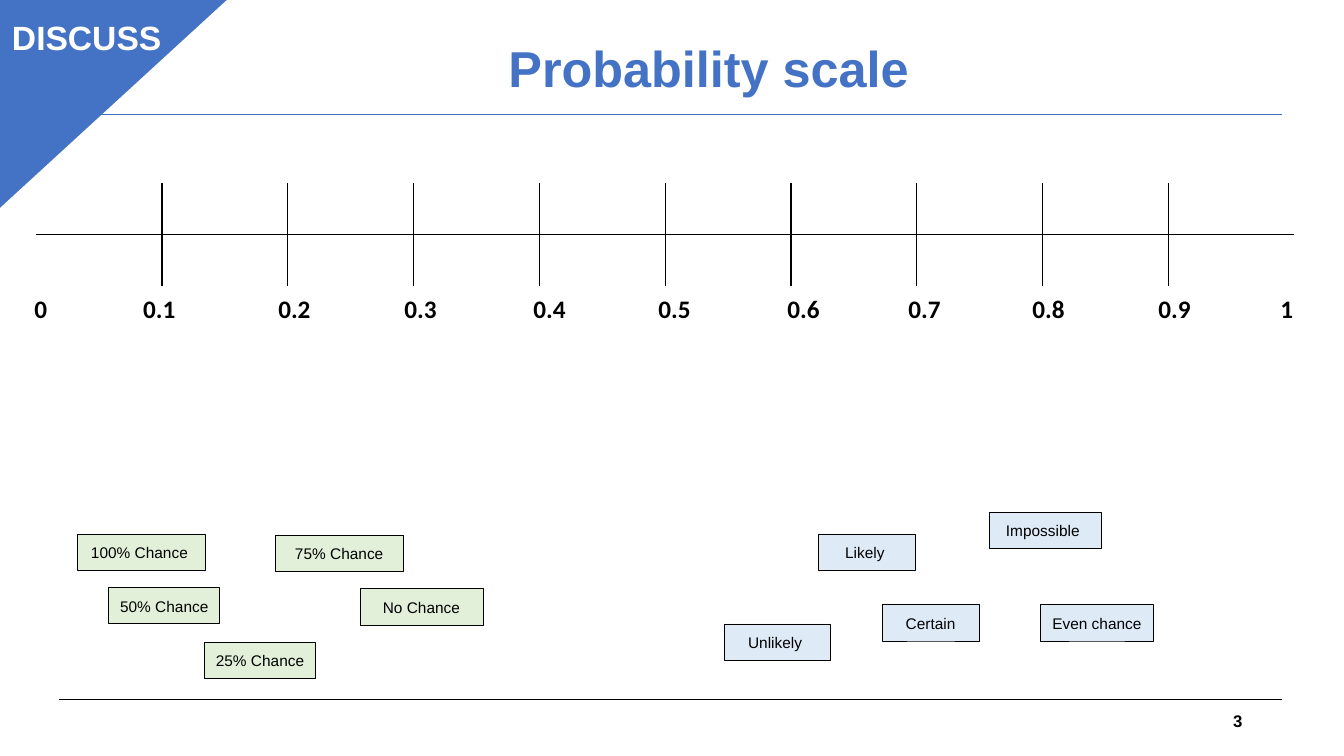
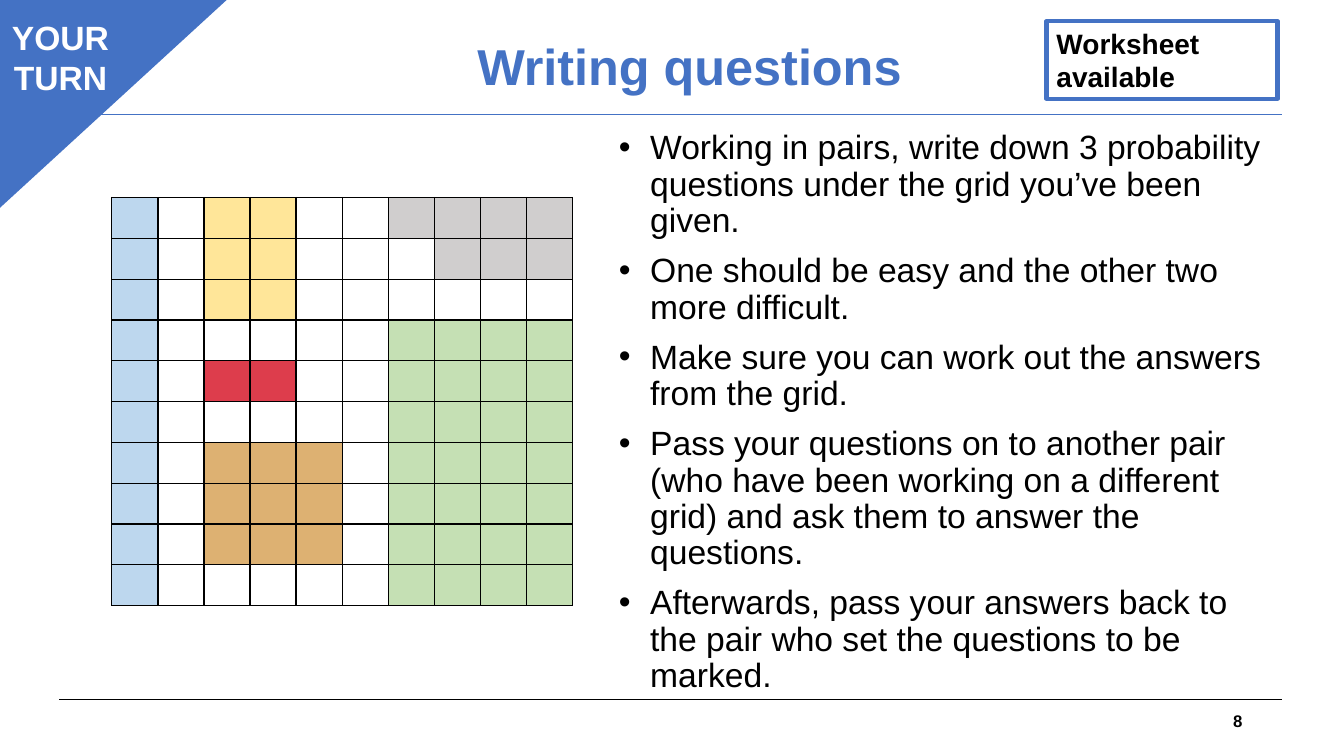
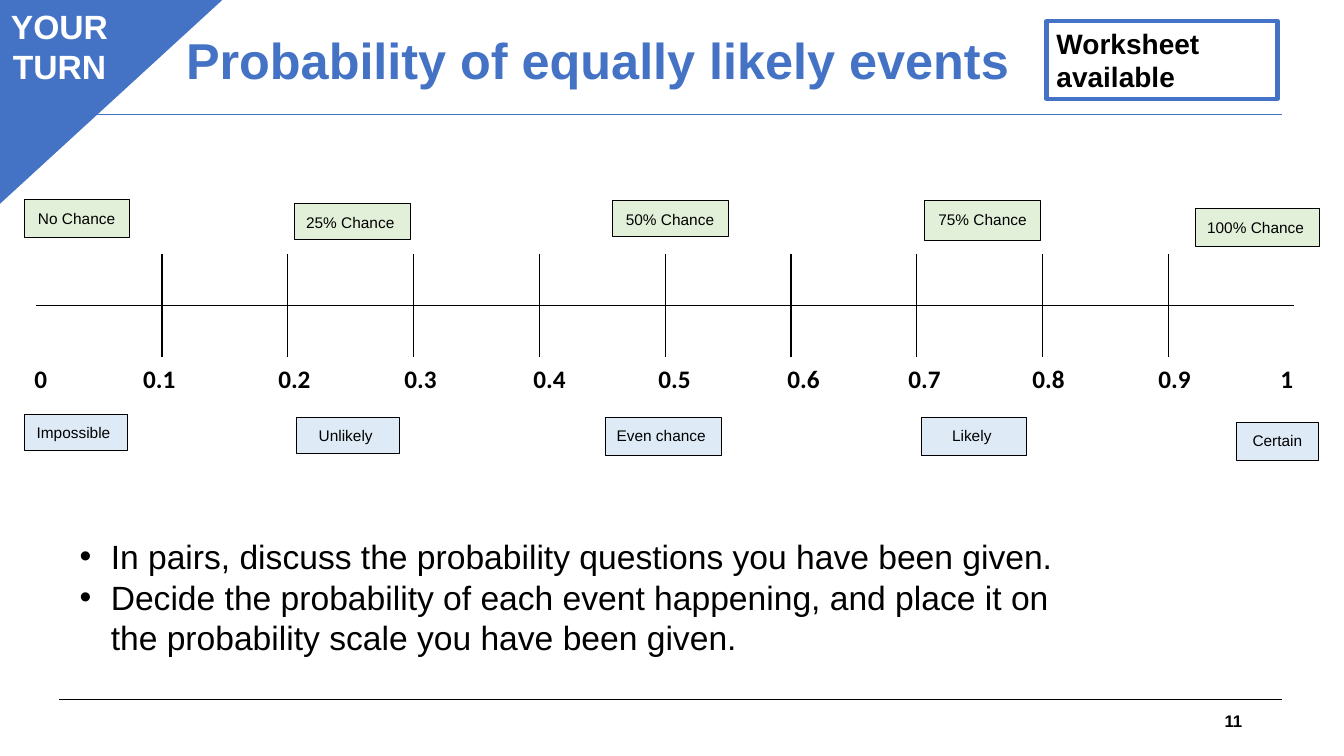
from pptx import Presentation
from pptx.dml.color import RGBColor as RGB
from pptx.enum.shapes import MSO_CONNECTOR as LINK, MSO_SHAPE as SHAPE
from pptx.enum.text import MSO_ANCHOR as ANCHOR, MSO_AUTO_SIZE as FIT, PP_ALIGN as ALIGN
from pptx.oxml.ns import qn
from pptx.util import Inches, Pt
from lxml.etree import SubElement as Sub


class Theme:
    blue = RGB(0x44, 0x72, 0xC4)
    black = RGB(0, 0, 0)
    white = RGB(255, 255, 255)
    green = RGB(0xE2, 0xF0, 0xD9)
    sky = RGB(0xDE, 0xEB, 0xF7)
    cells = {
        "B": RGB(0xBD, 0xD7, 0xEE),
        "Y": RGB(0xFF, 0xE6, 0x99),
        "S": RGB(0xD0, 0xCE, 0xCE),
        "G": RGB(0xC5, 0xE0, 0xB4),
        "R": RGB(0xDD, 0x3D, 0x4C),
        "T": RGB(0xDD, 0xB1, 0x72),
    }
    font, digit = "Arial", "Calibri"
    title, body, note, scale, foot, label = 36, 24, 20, 18, 12, 11
    plain = "{2D5ABB26-0587-4C30-8999-92F81FD0307C}"


def box(page, at, lines, size, color=Theme.black, bold=False, align=ALIGN.LEFT,
        anchor=ANCHOR.TOP, fill=None, line=None, width=0.5, bullet=False):
    """Text in a plain box, or in a rectangle when it has a fill or a line."""
    at = [Inches(n) for n in at]
    if fill or line:
        item = page.shapes.add_shape(SHAPE.RECTANGLE, *at)
        item.shadow.inherit = False
        item.line.color.rgb = line
        item.line.width = Pt(width)
        if fill:
            item.fill.solid()
            item.fill.fore_color.rgb = fill
        else:
            item.fill.background()
    else:
        item = page.shapes.add_textbox(*at)
    frame = item.text_frame
    frame.word_wrap = True
    frame.vertical_anchor = anchor
    for i, text in enumerate(lines):
        para = frame.add_paragraph() if i else frame.paragraphs[0]
        para.text = text
        para.alignment = align
        for run in para.runs:
            run.font.name, run.font.size = Theme.font, Pt(size)
            run.font.bold, run.font.color.rgb = bold, color
        if bullet:
            props = para._p.get_or_add_pPr()
            props.set("marL", str(Inches(0.31)))
            props.set("indent", str(-Inches(0.31)))
            Sub(props, qn("a:buFont")).set("typeface", Theme.font)
            Sub(props, qn("a:buChar")).set("char", "•")
    return item


def grid(page, left, top, wide, high, inner=False, outer=False):
    """Unstyled table with optional black inner and outer borders."""
    cols, rows = len(wide), len(high)
    frame = page.shapes.add_table(rows, cols, Inches(left), Inches(top),
                                  Inches(sum(wide)), Inches(sum(high)))
    frame.element.xpath(".//a:tableStyleId")[0].text = Theme.plain
    table = frame.table
    table.first_row = table.horz_banding = False
    for col, size in zip(table.columns, wide):
        col.width = Inches(size)
    for row, size in zip(table.rows, high):
        row.height = Inches(size)
    for r in range(rows):
        for c in range(cols):
            cell = table.cell(r, c)
            cell.margin_top = cell.margin_bottom = Inches(0.05 if not outer else 0)
            props = cell._tc.get_or_add_tcPr()
            rims = {"L": c == 0, "R": c == cols - 1, "T": r == 0, "B": r == rows - 1}
            for side, rim in rims.items():
                edge = Sub(props, qn("a:ln" + side))
                if outer if rim else inner:
                    edge.set("w", str(Pt(1)))
                    paint = Sub(edge, qn("a:solidFill"))
                    Sub(paint, qn("a:srgbClr")).set("val", str(Theme.black))
                else:
                    Sub(edge, qn("a:noFill"))
            cell.fill.background()
    return table


deck = Presentation()
deck.slide_width, deck.slide_height = Inches(13.33), Inches(7.5)
layout = deck.slide_layouts[5]

# Title, corner, tag and number of each slide
heads = [
    ("Probability scale", (2.03, 0.15, 10, 1.11), ANCHOR.MIDDLE,
     -0.02, ["DISCUSS"], (-0.01, 0.12, 1.74, 0.5), None, "3"),
    ("Writing questions", (1.53, 0.37, 10.62, 0.83), ANCHOR.TOP,
     -0.02, ["YOUR", "TURN"], (0.01, 0.12, 1.18, 0.91), None, "8"),
    ("Probability of equally likely events", (1.69, 0.12, 8.48, 1.02), ANCHOR.MIDDLE,
     -0.06, ["YOUR", "TURN"], (0, 0.01, 1.18, 0.91), Theme.blue, "11"),
]
pages = []
for name, spot, anchor, top, tag, place, back, num in heads:
    page = deck.slides.add_slide(layout)
    pages.append(page)
    title = page.shapes.title
    title.left, title.top, title.width, title.height = [Inches(n) for n in spot]
    frame = title.text_frame
    frame.text = name
    frame.auto_size = FIT.NONE
    frame.word_wrap = True
    frame.vertical_anchor = anchor
    para = frame.paragraphs[0]
    para.alignment, para.line_spacing = ALIGN.CENTER, 0.9
    font = para.runs[0].font
    font.name, font.size, font.bold = Theme.font, Pt(Theme.title), True
    font.color.rgb = Theme.blue

    corner = page.shapes.add_shape(SHAPE.ISOSCELES_TRIANGLE, Inches(-0.03), Inches(top),
                                   Inches(2.29), Inches(2.1))
    corner.adjustments[0] = 0
    corner.element.spPr.get_or_add_xfrm().set("flipV", "1")
    corner.shadow.inherit = False
    corner.fill.solid()
    corner.fill.fore_color.rgb = corner.line.color.rgb = Theme.blue
    corner.line.width = Pt(1)
    box(page, place, tag, Theme.body, Theme.white, True, ALIGN.CENTER,
        fill=back, line=back, width=0.75)
    box(page, (9.42, 6.95, 3, 0.4), [num], Theme.foot, bold=True,
        align=ALIGN.RIGHT, anchor=ANCHOR.MIDDLE)

first, second, third = pages

# Rules above and below the content, kept on the layout
for y, color in ((6.94, Theme.black), (1.14, Theme.blue)):
    rule = first.shapes.add_connector(LINK.STRAIGHT, Inches(0.59), Inches(y),
                                      Inches(12.72), Inches(y))
    rule.line.color.rgb, rule.line.width = color, Pt(0.75)
    Sub(rule.element.spPr, qn("a:effectLst"))
    layout.shapes.element.append(rule.element)

# Probability scale with its numbers; the last cell holds two, set apart by a tab
marks = ["0", *(f"0.{n}" for n in range(1, 9)), "0.9\t1"]
gaps = [1.08, 1.34, 1.25, 1.28, 1.24, 1.28, 1.2, 1.23, 1.25, 1.95]
for page, top in ((first, 1.82), (third, 2.52)):
    grid(page, 0.36, top, [12.48 / 10] * 10, [0.51] * 2, inner=True)
    table = grid(page, 0.24, top + 1.05, gaps, [0.42] * 2)
    for cell, mark in zip(table.rows[0].cells, marks):
        cell.text_frame.text = mark
        para = cell.text_frame.paragraphs[0]
        font = para.runs[0].font
        font.name, font.size, font.bold = Theme.digit, Pt(Theme.scale), True
        font.color.rgb = Theme.black
    tabs = Sub(para._p.get_or_add_pPr(), qn("a:tabLst"))
    stop = Sub(tabs, qn("a:tab"))
    stop.set("pos", str(Inches(1.21)))
    stop.set("algn", "l")

# Chance and word labels
labels = [
    (first, Theme.green, [
        ("100% Chance ", 0.77, 5.3, 1.27, 0.36),
        ("50% Chance", 1.08, 5.83, 1.1, 0.36),
        ("75% Chance", 2.73, 5.31, 1.27, 0.36),
        ("25% Chance ", 2.03, 6.37, 1.1, 0.36),
        ("No Chance", 3.57, 5.84, 1.22, 0.36)]),
    (first, Theme.sky, [
        ("Unlikely ", 7.18, 6.19, 1.06, 0.36),
        ("Likely ", 8.12, 5.3, 0.96, 0.36),
        ("Certain", 8.75, 6, 0.96, 0.36),
        ("Even chance ", 10.32, 6, 1.12, 0.36),
        ("Impossible ", 9.81, 5.08, 1.11, 0.36)]),
    (third, Theme.green, [
        ("100% Chance ", 11.86, 2.07, 1.23, 0.37),
        ("50% Chance", 6.07, 1.99, 1.15, 0.36),
        ("75% Chance", 9.17, 1.99, 1.15, 0.39),
        ("25% Chance ", 2.92, 2.02, 1.15, 0.36),
        ("No Chance", 0.24, 1.98, 1.04, 0.38)]),
    (third, Theme.sky, [
        ("Unlikely ", 2.94, 4.14, 1.02, 0.36),
        ("Likely ", 9.14, 4.14, 1.04, 0.38),
        ("Certain", 12.26, 4.19, 0.82, 0.38),
        ("Even chance ", 6, 4.14, 1.16, 0.38),
        ("Impossible ", 0.24, 4.11, 1.02, 0.36)]),
]
for page, fill, group in labels:
    for text, *at in group:
        label = box(page, at, [text], Theme.label, align=ALIGN.CENTER,
                    fill=fill, line=Theme.black)
        label.text_frame.margin_top = Inches(0.09)

# Coloured grid
plan = ["B.YY..SSSS", "B.YY...SSS", "B.YY......", "B.....GGGG", "B.RR..GGGG",
        "B.....GGGG", *["B.TTT.GGGG"] * 3, "B.....GGGG"]
table = grid(second, 1.11, 1.96, [4.57 / 10] * 10, [4.05 / 10] * 10,
             inner=True, outer=True)
for row, keys in zip(table.rows, plan):
    for cell, key in zip(row.cells, keys):
        if key in Theme.cells:
            cell.fill.solid()
            cell.fill.fore_color.rgb = Theme.cells[key]

# Tasks
tasks = box(second, (6.04, 1.25, 6.72, 5.76), [
    "Working in pairs, write down 3 probability questions under the grid you’ve been given.",
    "One should be easy and the other two more difficult.",
    "Make sure you can work out the answers from the grid.",
    "Pass your questions on to another pair (who have been working on a different grid) "
    "and ask them to answer the questions.",
    "Afterwards, pass your answers back to the pair who set the questions to be marked.",
], Theme.body, bullet=True)
for para in tasks.text_frame.paragraphs:
    para.line_spacing, para.space_before = 0.9, Pt(10)

box(third, (0.69, 5.27, 10.22, 1.31), [
    "In pairs, discuss the probability questions you have been given.",
    "Decide the probability of each event happening, and place it on the probability "
    "scale you have been given.",
], Theme.body, bullet=True)

# Worksheet note
for page in (second, third):
    box(page, (10.38, 0.21, 2.29, 0.77), ["Worksheet\navailable"], Theme.note, bold=True,
        anchor=ANCHOR.MIDDLE, line=Theme.blue, width=3)

deck.save("out.pptx")
